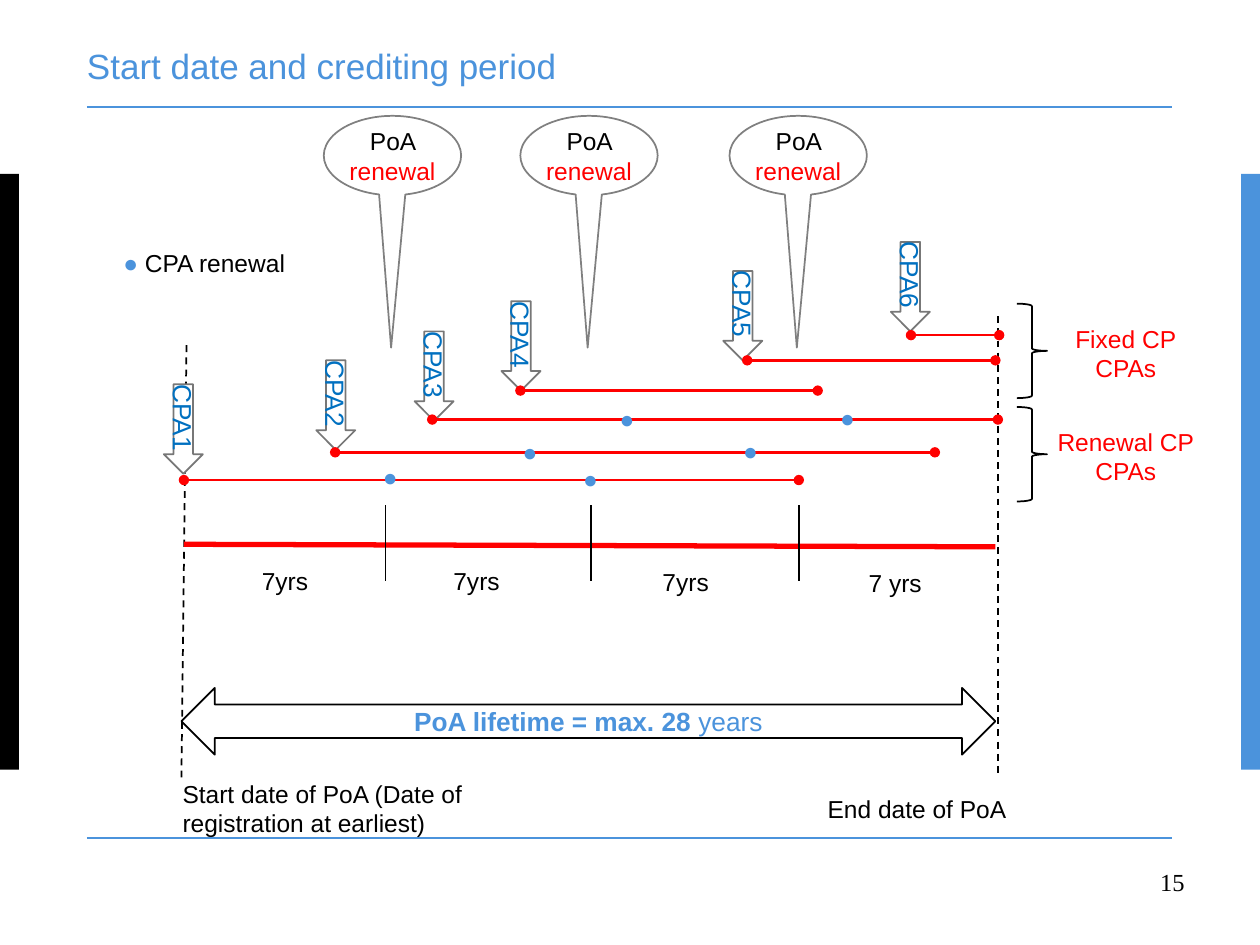
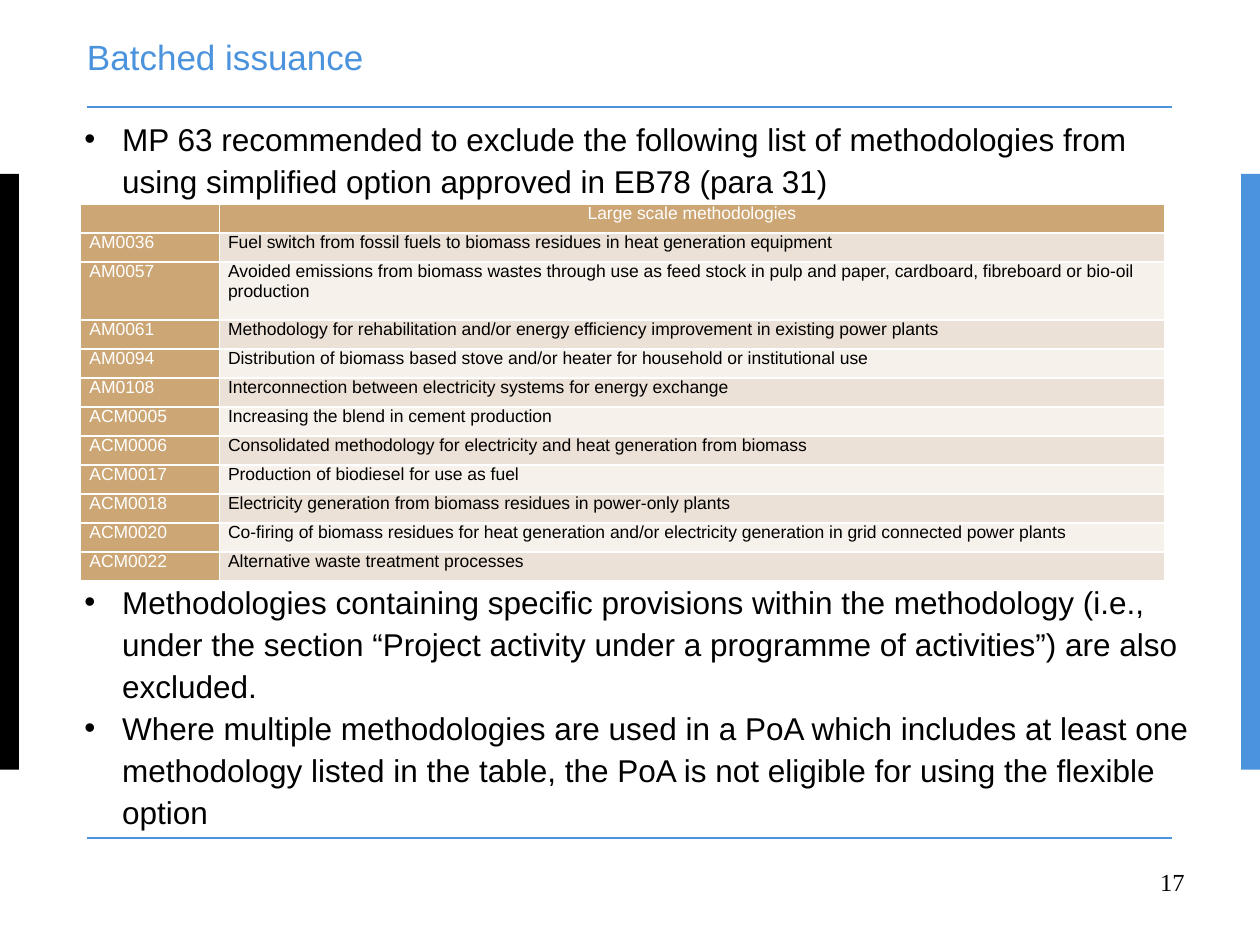
from dataclasses import dataclass
from lxml import etree
from pptx import Presentation
from pptx.dml.color import RGBColor
from pptx.enum.dml import MSO_LINE
from pptx.enum.shapes import MSO_CONNECTOR, MSO_SHAPE
from pptx.enum.text import MSO_ANCHOR, MSO_AUTO_SIZE, PP_ALIGN
from pptx.oxml.ns import qn
from pptx.slide import Slide
from pptx.util import Emu, Inches, Pt

# The slide is a grid of 100 columns by 75 rows of square cells.
SLIDE_W, SLIDE_H = Inches(10), Inches(7.5)
CELL = SLIDE_W / 100

BLACK, WHITE, RED = "000000", "FFFFFF", "FF0000"
BLUE, DEEP_BLUE = "4B93DC", "0070C0"
ARROW_GREY, CALLOUT_GREY = "777777", "808080"
TAN, BAND_DARK, BAND_LIGHT = "CCA674", "ECE1D6", "F6F1EB"
CENTER = PP_ALIGN.CENTER

CPAS = [  # name, arrow (left, top), bar (start, end, row), renewal dots
    ("CPA1", (0, 11.3), (1.6, 50.4, 18.9), [(16.4, 17), (32.3, 17.1)]),
    ("CPA2", (12.1, 9.4), (13.6, 61.2, 16.7), [(27.5, 15), (45, 14.9)]),
    ("CPA3", (19.9, 7.1), (21.3, 66.2, 14.1), [(35.2, 12.4), (52.7, 12.3)]),
    ("CPA4", (26.8, 4.7), (28.3, 51.9, 11.8), []),
    ("CPA5", (44.4, 2.3), (46.3, 66, 9.4), []),
    ("CPA6", (57.7, 0), (59.3, 66.3, 7.4), []),
]

METHODOLOGIES = [
    ("", "Large scale methodologies"),
    ("AM0036", "Fuel switch from fossil fuels to biomass residues in heat generation equipment"),
    ("AM0057", "Avoided emissions from biomass wastes through use as feed stock in pulp and paper, "
               "cardboard, fibreboard or bio-oil production"),
    ("AM0061", "Methodology for rehabilitation and/or energy efficiency improvement in existing "
               "power plants"),
    ("AM0094", "Distribution of biomass based stove and/or heater for household or institutional use"),
    ("AM0108", "Interconnection between electricity systems for energy exchange"),
    ("ACM0005", "Increasing the blend in cement production"),
    ("ACM0006", "Consolidated methodology for electricity and heat generation from biomass"),
    ("ACM0017", "Production of biodiesel for use as fuel"),
    ("ACM0018", "Electricity generation from biomass residues in power-only plants"),
    ("ACM0020", "Co-firing of biomass residues for heat generation and/or electricity generation "
                "in grid connected power plants"),
    ("ACM0022", "Alternative waste treatment processes"),
]


def rgb(code):
    return RGBColor.from_string(code)


def cells(*counts):
    return [Emu(round(count * CELL)) for count in counts]


def style_run(run, color, size, bold=False, font="Arial"):
    run.font.name, run.font.size, run.font.bold = font, Pt(size), bold
    run.font.color.rgb = rgb(color)


def write(frame, paragraphs, size, align=PP_ALIGN.LEFT, font="Arial"):
    """Fill a frame; each paragraph is a list of (text, colour[, bold]) runs."""
    frame.word_wrap = True
    for index, parts in enumerate(paragraphs):
        paragraph = frame.add_paragraph() if index else frame.paragraphs[0]
        paragraph.alignment = align
        for text, color, *bold in parts:
            run = paragraph.add_run()
            run.text = text
            style_run(run, color, size, bool(bold and bold[0]), font)


def clear_margins(frame):
    frame.margin_left = frame.margin_right = frame.margin_top = frame.margin_bottom = 0


@dataclass
class Region:
    """A place on a slide; its parts are given in cells from its top left corner."""
    slide: Slide
    left: float
    top: float

    def place(self, left, top, width, height):
        return cells(self.left + left, self.top + top, width, height)

    def shape(self, kind, box, fill=None, line=None):
        shape = self.slide.shapes.add_shape(kind, *self.place(*box))
        shape.shadow.inherit = False
        if fill:
            shape.fill.solid()
            shape.fill.fore_color.rgb = rgb(fill)
        else:
            shape.fill.background()
        if line:
            shape.line.color.rgb = rgb(line)
            shape.line.width = Pt(1)
        else:
            shape.line.fill.background()
        frame = shape.text_frame
        clear_margins(frame)
        frame.vertical_anchor = MSO_ANCHOR.MIDDLE
        return shape

    def line(self, start, end, color=BLACK, width=1, dashed=False, dots=False):
        ends = cells(self.left + start[0], self.top + start[1],
                     self.left + end[0], self.top + end[1])
        line = self.slide.shapes.add_connector(MSO_CONNECTOR.STRAIGHT, *ends)
        line.line.color.rgb = rgb(color)
        line.line.width = Pt(width)
        if dashed:
            line.line.dash_style = MSO_LINE.DASH
        properties = line._element.spPr
        if dots:
            outline = properties.find(qn("a:ln"))
            for tip in ("a:headEnd", "a:tailEnd"):
                etree.SubElement(outline, qn(tip), type="oval")
        etree.SubElement(properties, qn("a:effectLst"))

    def label(self, box, paragraphs, size=14, **style):
        label = self.slide.shapes.add_textbox(*self.place(*box))
        write(label.text_frame, paragraphs, size, **style)
        return label


def add_framed_slide(deck, title, title_top, number):
    """Add a slide with the title, side bands, rules and page number all slides share."""
    slide = deck.slides.add_slide(deck.slide_layouts[5])
    page = Region(slide, 0, 0)
    for left, color in ((0, BLACK), (98.5, BLUE)):
        page.shape(MSO_SHAPE.RECTANGLE, (left, 13.8, 1.5, 47.3), fill=color)
    for row in (8.5, 66.5):
        page.line((6.9, row), (93, row), BLUE)
    page.label((71.7, 68.3, 23.3, 5.2), [[(number, BLACK)]],
               align=PP_ALIGN.RIGHT, font="Times New Roman")

    heading = slide.shapes.title
    heading.left, heading.top, heading.width, heading.height = cells(6.9, title_top, 86.1, 3.4)
    frame = heading.text_frame
    clear_margins(frame)
    frame.auto_size = MSO_AUTO_SIZE.NONE
    frame.vertical_anchor = MSO_ANCHOR.MIDDLE
    write(frame, [[(title, BLUE)]], 20)
    frame.paragraphs[0].line_spacing = Pt(15)
    return slide


def add_lifetime(region):
    region.shape(MSO_SHAPE.LEFT_RIGHT_ARROW, (0.9, 29.6, 64.6, 5.3), WHITE, BLACK)
    arrow = region.slide.shapes[-1]
    write(arrow.text_frame, [[("PoA lifetime = max. 28", BLUE, True), (" years", BLUE)]], 15, CENTER)
    region.line((1.3, 2.4), (0.9, 36.7), dashed=True)
    region.line((65.7, 0.1), (65.7, 36.7), dashed=True)
    region.label((0, 36.3, 24.5, 5.7),
                 [[("Start date of PoA (Date of registration at earliest)", BLACK)]])
    region.label((51.2, 37.5, 17.3, 3.4), [[("End date of PoA", BLACK)]])


def add_seven_year_periods(region):
    region.line((0, 3.1), (64.4, 3.3), RED, 3)
    for column in (16, 32.3, 48.8):
        region.line((column, 0), (column, 6))
    for left, top in ((5.2, 4.3), (20.4, 4.3), (37, 4.4)):
        region.label((left, top, 6.3, 3.4), [[("7yrs", BLACK)]])
    region.label((51.9, 4.5, 9.1, 3.4), [[("7 yrs", BLACK)]], align=CENTER)


def add_cpas(region):
    for name, arrow_corner, (start, end, row), renewals in CPAS:
        fill = WHITE if name == "CPA1" else None
        arrow = region.shape(MSO_SHAPE.DOWN_ARROW, (*arrow_corner, 3.1, 7.1), fill, ARROW_GREY)
        write(arrow.text_frame, [[(name, DEEP_BLUE)]], 15)
        arrow.text_frame._txBody.bodyPr.set("vert", "vert")
        region.line((start, row), (end, row), RED, 1.5, dots=True)
        for corner in renewals:
            region.label((*corner, 3, 3.4), [[("●", BLUE)]])


def add_poa_renewals(region):
    for left in (0, 15.6, 32.2):
        callout = region.shape(MSO_SHAPE.OVAL_CALLOUT, (left, 0, 10.9, 6.3), line=CALLOUT_GREY)
        callout.adjustments[0], callout.adjustments[1] = -0.01, 2.42
        write(callout.text_frame, [[("PoA ", BLACK), ("renewal", RED)]], 14, CENTER)


def add_braced_group(region, name):
    region.label((0, 1.1, 17.3, 5.7), [[(name, RED)], [("CPAs", RED)]], align=CENTER)
    region.shape(MSO_SHAPE.RIGHT_BRACE, (0, 0, 2.4, 7.5), line=BLACK)


def add_bullets(region, width, height, items):
    body = region.label((0, 0, width, height), [[(item, BLACK)] for item in items], 18)
    clear_margins(body.text_frame)
    for paragraph in body.text_frame.paragraphs:
        paragraph.line_spacing = Pt(24)
        properties = paragraph._p.get_or_add_pPr()
        properties.set("marL", str(Inches(0.3)))
        properties.set("indent", str(-Inches(0.3)))
        color = etree.SubElement(properties, qn("a:buClr"))
        etree.SubElement(color, qn("a:srgbClr"), val=BLACK)
        etree.SubElement(properties, qn("a:buFont"), typeface="Arial")
        etree.SubElement(properties, qn("a:buChar"), char="•")


def add_cell_borders(cell):
    properties = cell._tc.get_or_add_tcPr()
    for side in ("a:lnL", "a:lnR", "a:lnT", "a:lnB"):
        border = etree.SubElement(properties, qn(side), w=str(Pt(1)))
        fill = etree.SubElement(border, qn("a:solidFill"))
        etree.SubElement(fill, qn("a:srgbClr"), val=WHITE)


def format_cell(cell, text, fill, color, align):
    cell.margin_left = cell.margin_right = Inches(0.07)
    cell.margin_top = cell.margin_bottom = 0
    add_cell_borders(cell)
    cell.fill.solid()
    cell.fill.fore_color.rgb = rgb(fill)
    paragraph = cell.text_frame.paragraphs[0]
    paragraph.alignment = align
    paragraph.space_after = Pt(3)
    if text:
        paragraph.text = text
        style_run(paragraph.runs[0], color, 10)
    else:
        etree.SubElement(paragraph._p, qn("a:endParaRPr"), sz="1000")


def add_methodology_table(region):
    row_height, two_line_row = 2.3, 2
    total = row_height * (len(METHODOLOGIES) + 1)
    table = region.slide.shapes.add_table(
        len(METHODOLOGIES), 2, *region.place(0, 0, 86, total)).table
    for column, width in zip(table.columns, cells(11, 75)):
        column.width = width
    for r, texts in enumerate(METHODOLOGIES):
        table.rows[r].height = cells(row_height * (2 if r == two_line_row else 1))[0]
        for c, text in enumerate(texts):
            heading = r == 0 or c == 0
            band = BAND_DARK if r % 2 else BAND_LIGHT
            format_cell(table.cell(r, c), text, TAN if heading else band,
                        WHITE if heading else BLACK, PP_ALIGN.LEFT if r else CENTER)


def add_crediting_slide(deck):
    slide = add_framed_slide(deck, "Start date and crediting period", 4.1, "15")
    add_lifetime(Region(slide, 13.5, 25))
    add_seven_year_periods(Region(slide, 14.6, 40.1))
    add_cpas(Region(slide, 13, 19.2))
    add_poa_renewals(Region(slide, 25.7, 9.2))
    Region(slide, 8.8, 19.2).label((0, 0, 15.2, 3.4), [[("● ", BLUE), ("CPA renewal", BLACK)]])
    add_braced_group(Region(slide, 80.7, 24.1), "Fixed CP")
    add_braced_group(Region(slide, 80.7, 32.3), "Renewal CP")


def add_issuance_slide(deck):
    slide = add_framed_slide(deck, "Batched issuance", 3.4, "17")
    add_bullets(Region(slide, 6.7, 9.2), 88.3, 6.7, [
        "MP 63 recommended to exclude the following list of methodologies from using simplified "
        "option approved in EB78 (para 31)"])
    add_methodology_table(Region(slide, 6.4, 16.2))
    add_bullets(Region(slide, 6.7, 45.9), 88.3, 20, [
        "Methodologies containing specific provisions within the methodology (i.e., under the "
        "section “Project activity under a programme of activities”) are also excluded.",
        "Where multiple methodologies are used in a PoA which includes at least one methodology "
        "listed in the table, the PoA is not eligible for using the flexible option"])


def main():
    deck = Presentation()
    deck.slide_width, deck.slide_height = SLIDE_W, SLIDE_H
    add_crediting_slide(deck)
    add_issuance_slide(deck)
    deck.save("out.pptx")


if __name__ == "__main__":
    main()
